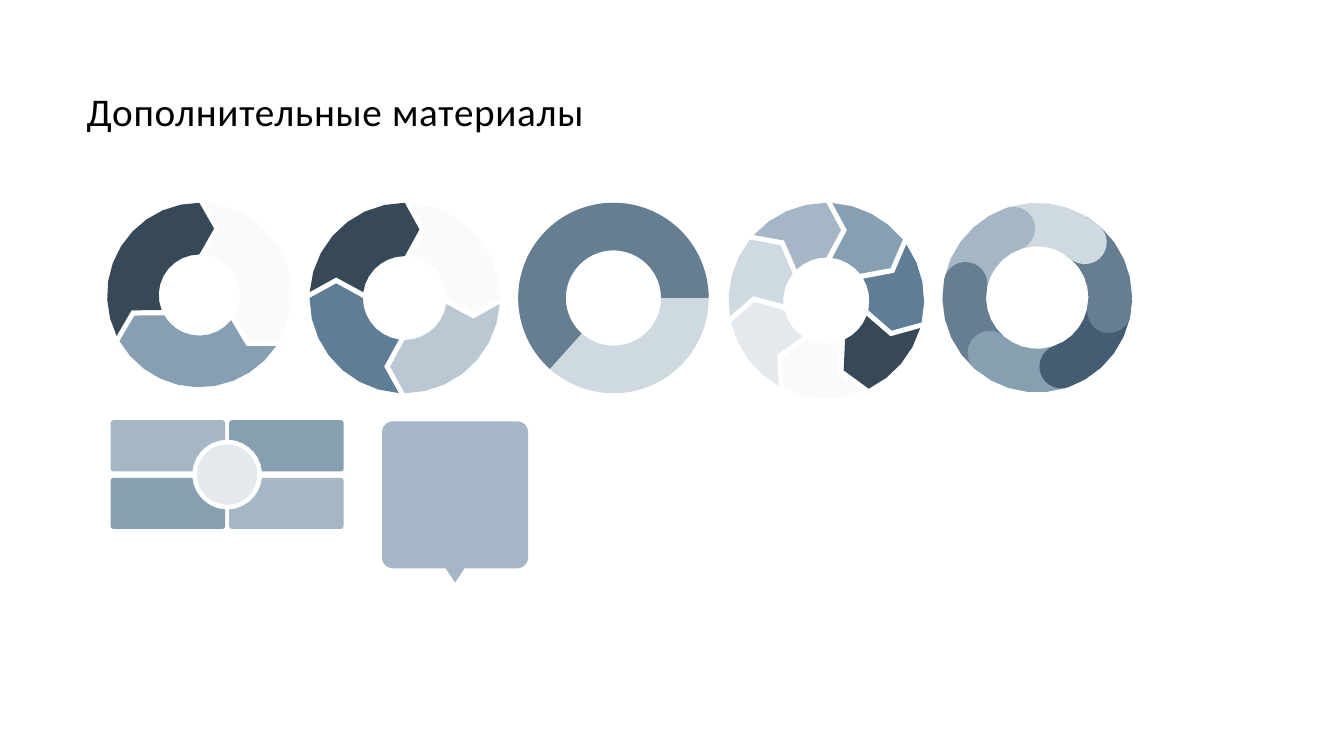
from math import acos, asin, atan2, cos, degrees, hypot, radians, sin

from pptx import Presentation
from pptx.dml.color import RGBColor
from pptx.enum.shapes import MSO_SHAPE
from pptx.enum.text import MSO_ANCHOR, PP_ALIGN
from pptx.util import Cm, Pt

OVAL, DONUT, BLOCK = MSO_SHAPE.OVAL, MSO_SHAPE.DONUT, MSO_SHAPE.BLOCK_ARC
LEFT, TOP = PP_ALIGN.LEFT, MSO_ANCHOR.TOP
TITLE_ONLY = 5
ROW = 5.11
HOLE = 0.44
ARROWS = [
    (2.7, 4.65, ["F8FAFB", "869FB2", "374957"]),
    (7.8, 4.8, ["F8FAFB", "BAC8D3", "5F7D95", "374957"]),
    (18.36, 4.93, ["869FB2", "5F7D95", "374957", "F8FAFB", "E3E9ED", "CFD9E0", "A5B7C6"]),
]
LINKS = ["869FB1", "445D73", "667E92", "CFD9E0", "A5B7C5", "667E92"]


def paint(shape, color):
    """Give a shape a flat fill without line or shadow."""
    shape.fill.solid()
    shape.fill.fore_color.rgb = RGBColor.from_string(color)
    shape.line.fill.background()
    shape.shadow.inherit = False


def polar(cx, cy, r, a):
    """Return the point at a clockwise angle from the top."""
    return cx + r * sin(radians(a)), cy - r * cos(radians(a))


def arc(cx, cy, r, a, b):
    """Return points along an arc from angle a to angle b."""
    n = max(3, round(abs(b - a) / 12))
    return [polar(cx, cy, r, a + (b - a) * i / n) for i in range(n + 1)]


def draw(slide, dots, color):
    """Draw a closed outline through points given in centimetres."""
    first, *rest = [(Cm(x), Cm(y)) for x, y in dots]
    form = slide.shapes.build_freeform(*first)
    form.add_line_segments(rest, close=True)
    paint(form.convert_to_shape(), color)


def preset(slide, kind, box, color, adjust=()):
    """Add a preset shape in a box, with its adjustments."""
    shape = slide.shapes.add_shape(kind, *map(Cm, box))
    for i, value in enumerate(adjust):
        shape.adjustments[i] = value
    paint(shape, color)


def heading(slide, box, text):
    """Place and format the slide title."""
    title = slide.shapes.title
    title.left, title.top, title.width, title.height = map(Cm, box)
    frame = title.text_frame
    frame.word_wrap = False
    frame.vertical_anchor = TOP
    para = frame.paragraphs[0]
    para.alignment = LEFT
    run = para.add_run()
    run.text = text
    run.font.size, run.font.name = Pt(28), "Calibri"
    run.font.color.rgb = RGBColor.from_string("000000")
    run._r.get_or_add_rPr().set("spc", "50")


def arrow_ring(slide, left, top, size, colors, gap=0.15, depth=0.37):
    """Draw a ring of arrow segments, clockwise from the top."""
    big = size / 2
    small, mid = big * HOLE, big * (1 + HOLE) / 2
    cx, cy = left + big, top + big
    step = 360 / len(colors)

    def tip(angle, ahead):
        """Return the arrow point ahead of a segment border."""
        return polar(cx, cy, hypot(mid, ahead), angle + degrees(atan2(ahead, mid)))

    for i, color in enumerate(colors):
        a, b = i * step, (i + 1) * step
        dots = arc(cx, cy, big, a + degrees(gap / big), b)
        dots.append(tip(b, depth))
        dots += arc(cx, cy, small, b, a + degrees(gap / small))
        dots.append(tip(a, depth + gap))
        draw(slide, dots, color)


def split_ring(slide, left, top, size):
    """Draw a ring in two parts."""
    box = left, top, size, size
    preset(slide, DONUT, box, "CFD9E0", [0.25])
    preset(slide, BLOCK, box, "667E92", [79.14, 0, 0.25])


def link_ring(slide, left, top, size, colors, hole=0.54, end=220.8, under=9.3):
    """Draw a ring of round-ended links, each over the next one."""
    big = size / 2
    small, mid, cap = big * hole, big * (1 + hole) / 2, big * (1 - hole) / 2
    cx, cy = left + big, top + big
    step = 360 / len(colors)
    for i, color in enumerate(colors):
        b = end - i * step
        last = i == len(colors) - 1
        a = b - step - (0 if last else under)
        dots = arc(cx, cy, big, a, b)
        dots += arc(*polar(cx, cy, mid, b), cap, b, b + 180)
        dots += arc(cx, cy, small, b, a)
        if last:
            dots += arc(*polar(cx, cy, mid, a), cap, a + 180, a)
        draw(slide, dots, color)


def matrix(slide, left, top, width, height):
    """Draw four panels around a disc."""
    half, tall = width / 2, height / 2
    cx, cy = left + half, top + tall
    gx, gy, bend, notch, disc = 0.05, 0.08, 0.08, 0.88, 0.76
    panel = arc(0, 0, notch, degrees(asin(gx / notch)), degrees(acos(gy / notch)))
    panel += arc(half - bend, -gy - bend, bend, 180, 90)
    panel += arc(half - bend, bend - tall, bend, 90, 0)
    panel += arc(gx + bend, bend - tall, bend, 0, -90)
    for sx in (-1, 1):
        for sy in (1, -1):
            color = "869FB1" if sx == sy else "A5B7C5"
            draw(slide, [(cx + sx * x, cy + sy * y) for x, y in panel], color)
    preset(slide, OVAL, (cx - disc, cy - disc, 2 * disc, 2 * disc), "E3E9ED")


def callout(slide, left, top, width, height, bend=0.27, tail=0.36, reach=0.24):
    """Draw a rounded box with a tail below its middle."""
    right, base, mid = left + width, top + height - tail, left + width / 2
    dots = arc(left + bend, top + bend, bend, -90, 0)
    dots += arc(right - bend, top + bend, bend, 0, 90)
    dots += arc(right - bend, base - bend, bend, 90, 180)
    dots += [(mid + reach, base), (mid, base + tail), (mid - reach, base)]
    dots += arc(left + bend, base - bend, bend, 180, 270)
    draw(slide, dots, "A5B7C6")


def main():
    """Build the slide and save it."""
    deck = Presentation()
    deck.slide_width, deck.slide_height = Cm(33.87), Cm(19.05)
    slide = deck.slides.add_slide(deck.slide_layouts[TITLE_ONLY])
    heading(slide, (1.93, 2.06, 13.18, 1.45), "Дополнительные материалы")
    for left, size, colors in ARROWS:
        arrow_ring(slide, left, ROW, size, colors)
    split_ring(slide, 13.06, ROW, 4.8)
    link_ring(slide, 23.75, ROW, 4.78, LINKS)
    matrix(slide, 2.79, 10.59, 5.87, 2.74)
    callout(slide, 9.63, 10.62, 3.68, 4.06)
    deck.save("out.pptx")


if __name__ == "__main__":
    main()
